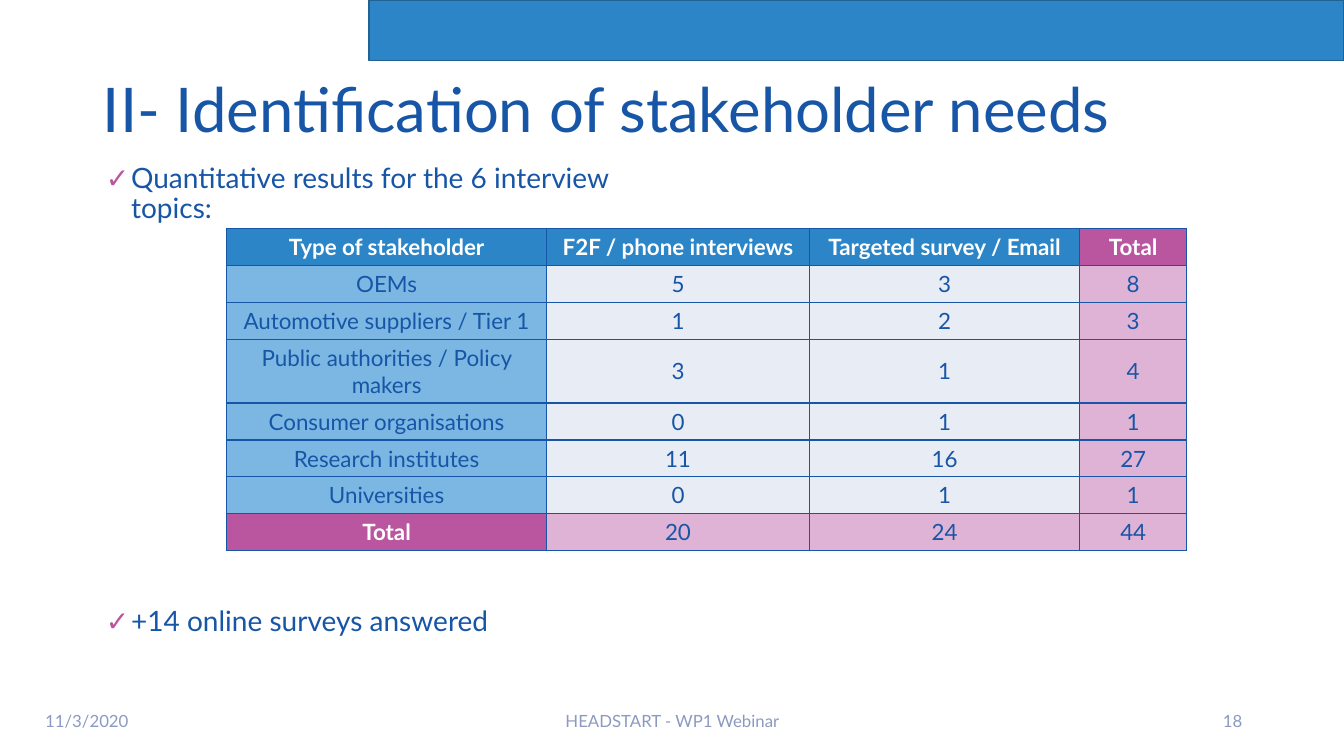
from dataclasses import dataclass

from lxml.etree import SubElement
from pptx import Presentation
from pptx.dml.color import RGBColor
from pptx.enum.shapes import MSO_SHAPE as Shape
from pptx.enum.text import MSO_ANCHOR as Anchor, MSO_AUTO_SIZE as AutoSize, PP_ALIGN as Align
from pptx.oxml import parse_xml
from pptx.oxml.ns import nsdecls, qn
from pptx.util import Inches, Pt


@dataclass(frozen=True)
class Theme:
    font: str = "Lato"
    ink: str = "1755A6"
    white: str = "FFFFFF"
    muted: str = "8C99C1"
    blue: str = "2C85C6"
    blue_edge: str = "216292"
    sky: str = "7BB7E2"
    pale: str = "E8EDF5"
    magenta: str = "BA55A0"
    pink: str = "DFB3D6"
    title_size: int = 44
    body_size: int = 20
    table_size: int = 16
    footer_size: int = 12


THEME = Theme()

TITLE = ("II- Identification of stakeholder needs", (0.92, 0.74, 11.5, 0.74))
FINDINGS = [
    ("Quantitative results for the 6 interview topics:", (0.95, 1.58, 6.06, 0.59)),
    ("+14 online surveys answered", (0.95, 5.97, 6.06, 0.59)),
]
STAKEHOLDERS = [
    ("Type of stakeholder", "F2F / phone interviews", "Targeted survey / Email", "Total"),
    ("OEMs", 5, 3, 8),
    ("Automotive suppliers / Tier 1", 1, 2, 3),
    ("Public authorities / Policy makers", 3, 1, 4),
    ("Consumer organisations", 0, 1, 1),
    ("Research institutes", 11, 16, 27),
    ("Universities", 0, 1, 1),
    ("Total", 20, 24, 44),
]
COLUMN_WIDTHS = (3.17, 2.61, 2.68, 1.06)
ROW_HEIGHT, WRAPPED_ROW, WRAPPED_HEIGHT = 0.36, 3, 0.63
FOOTERS = [
    ("11/3/2020", 0.35, 3, Align.LEFT),
    ("HEADSTART - WP1 Webinar", 4.42, 4.5, Align.CENTER),
    ("18", 9.42, 3, Align.RIGHT),
]


def write(frame, text, size, color=THEME.ink, bold=False, align=Align.LEFT,
          anchor=Anchor.TOP, spacing=None, bullet=None):
    frame.word_wrap = True
    frame.vertical_anchor = anchor
    paragraph = frame.paragraphs[0]
    paragraph.text = text
    paragraph.alignment = align
    if spacing:
        paragraph.line_spacing = spacing
        paragraph.space_before = Pt(0)
    if bullet:
        properties = paragraph._p.get_or_add_pPr()
        properties.set("marL", str(Inches(0.25)))
        properties.set("indent", str(-Inches(0.25)))
        bullet_color = SubElement(properties, qn("a:buClr"))
        SubElement(bullet_color, qn("a:srgbClr"), val=THEME.magenta)
        SubElement(properties, qn("a:buFont"), typeface=THEME.font)
        SubElement(properties, qn("a:buChar"), char=bullet)
    for font in (paragraph.font, paragraph.runs[0].font):
        font.name = THEME.font
        font.size = Pt(size)
        font.bold = bold
        font.color.rgb = RGBColor.from_string(color)


def place(placeholder, box):
    placeholder.left, placeholder.top, placeholder.width, placeholder.height = map(Inches, box)
    placeholder.text_frame.auto_size = AutoSize.NONE
    return placeholder.text_frame


def border(cell):
    for index, side in enumerate(("lnL", "lnR", "lnT", "lnB")):
        cell._tc.get_or_add_tcPr().insert(index, parse_xml(
            f'<a:{side} {nsdecls("a")} w="{Pt(1)}"><a:solidFill>'
            f'<a:srgbClr val="{THEME.ink}"/></a:solidFill></a:{side}>'))


def cell_fill(row, column):
    last_row, last_column = len(STAKEHOLDERS) - 1, len(COLUMN_WIDTHS) - 1
    if (row, column) in ((0, last_column), (last_row, 0)):
        return THEME.magenta
    if row == 0:
        return THEME.blue
    if row == last_row or column == last_column:
        return THEME.pink
    return THEME.pale if column else THEME.sky


def add_stakeholders(slide):
    heights = [WRAPPED_HEIGHT if row == WRAPPED_ROW else ROW_HEIGHT
               for row in range(len(STAKEHOLDERS))]
    table = slide.shapes.add_table(
        len(heights), len(COLUMN_WIDTHS), Inches(2.25), Inches(2.27),
        Inches(sum(COLUMN_WIDTHS)), Inches(sum(heights))).table
    table.horz_banding = False
    for column, width in zip(table.columns, COLUMN_WIDTHS):
        column.width = Inches(width)
    for r, values in enumerate(STAKEHOLDERS):
        table.rows[r].height = Inches(heights[r])
        for c, value in enumerate(values):
            cell, fill = table.cell(r, c), cell_fill(r, c)
            heading = fill in (THEME.blue, THEME.magenta)
            write(cell.text_frame, str(value), THEME.table_size, bold=heading,
                  color=THEME.white if heading else THEME.ink, align=Align.CENTER)
            cell.vertical_anchor = Anchor.MIDDLE
            cell.fill.solid()
            cell.fill.fore_color.rgb = RGBColor.from_string(fill)
            border(cell)


def main():
    deck = Presentation()
    deck.slide_width, deck.slide_height = Inches(13.33), Inches(7.5)
    slide = deck.slides.add_slide(deck.slide_layouts.get_by_name("Two Content"))

    banner = slide.shapes.add_shape(
        Shape.RECTANGLE, Inches(3.66), 0, Inches(9.67), Inches(0.6))
    banner.shadow.inherit = False
    banner.fill.solid()
    banner.fill.fore_color.rgb = RGBColor.from_string(THEME.blue)
    banner.line.color.rgb = RGBColor.from_string(THEME.blue_edge)
    banner.line.width = Pt(1)

    title, title_box = TITLE
    write(place(slide.shapes.title, title_box), title, THEME.title_size, spacing=0.9)
    for index, (finding, box) in enumerate(FINDINGS, start=1):
        write(place(slide.placeholders[index], box), finding, THEME.body_size,
              spacing=0.9, bullet="✓")

    add_stakeholders(slide)

    for footer, left, width, align in FOOTERS:
        footer_box = slide.shapes.add_textbox(
            Inches(left), Inches(6.95), Inches(width), Inches(0.4))
        write(footer_box.text_frame, footer, THEME.footer_size, color=THEME.muted,
              align=align, anchor=Anchor.MIDDLE)

    deck.save("out.pptx")


if __name__ == "__main__":
    main()
